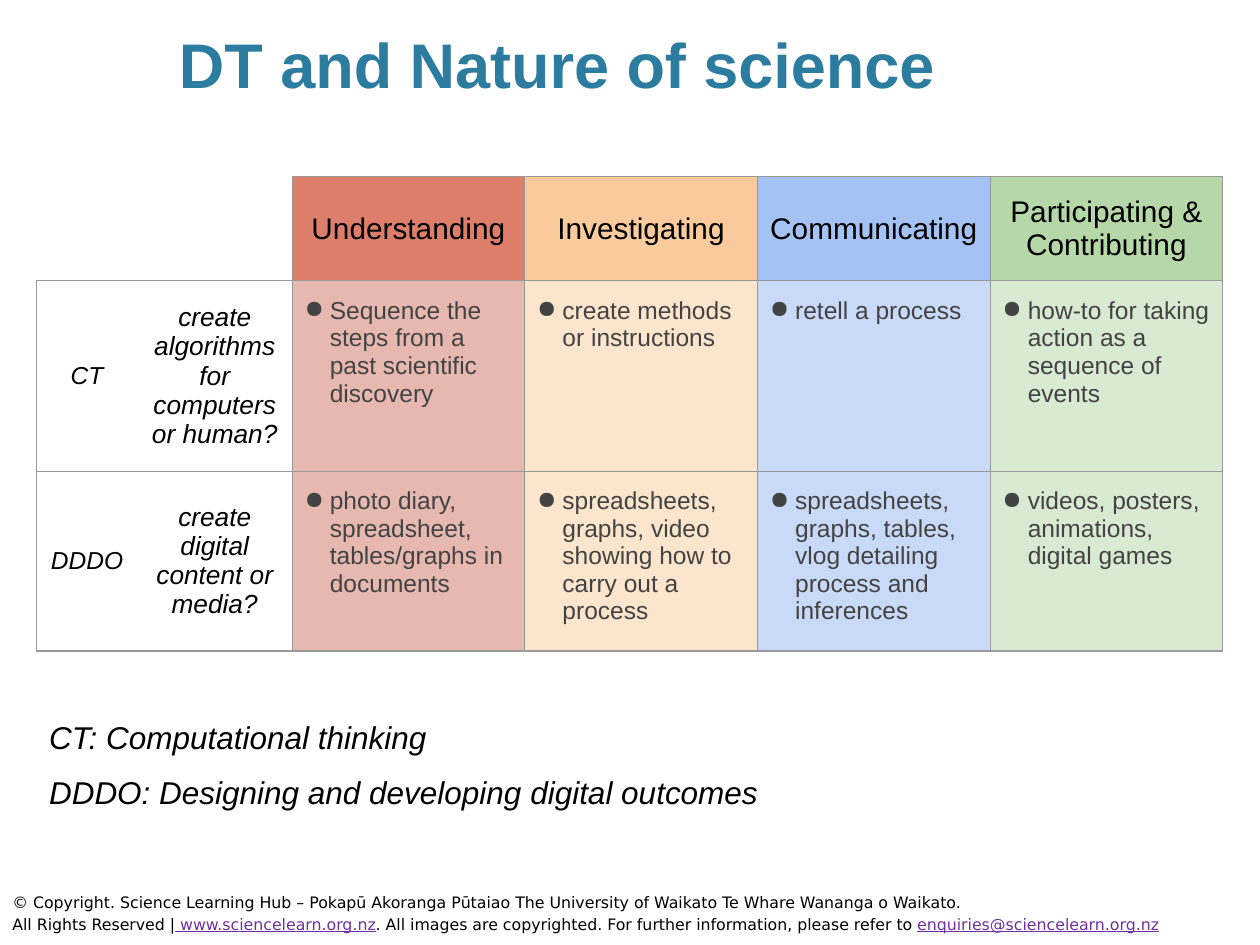
from dataclasses import dataclass
from lxml import etree
from pptx import Presentation
from pptx.dml.color import RGBColor
from pptx.enum.text import MSO_ANCHOR, PP_ALIGN
from pptx.oxml.ns import qn
from pptx.util import Cm, Pt

TOP, MID, LOW = MSO_ANCHOR.TOP, MSO_ANCHOR.MIDDLE, MSO_ANCHOR.BOTTOM
LEFT, MIDDLE = PP_ALIGN.LEFT, PP_ALIGN.CENTER


@dataclass(frozen=True)
class Style:
    size: float
    color: str = "000000"
    font: str = "Arial"
    bold: bool = False
    italic: bool = False
    under: bool = False


@dataclass(frozen=True)
class Theme:
    title: Style = Style(36, "2C7C9F", bold=True)
    head: Style = Style(17)
    code: Style = Style(14, italic=True)
    ask: Style = Style(15, italic=True)
    item: Style = Style(14, "434343")
    key: Style = Style(18, italic=True)
    foot: Style = Style(9, font="DejaVu Sans")
    link: Style = Style(9, "7030A0", "DejaVu Sans", under=True)
    edge: str = "999999"
    heads: tuple = ("DD7E6B", "F9CB9C", "A4C2F4", "B6D7A8")
    tints: tuple = ("E6B8AF", "FCE5CD", "C9DAF8", "D9EAD3")


THEME = Theme()
HEADS = ["Understanding", "Investigating", "Communicating",
         "Participating & Contributing"]
ROWS = [
    ("CT", "create algorithms for computers or human?",
     ["Sequence the steps from a past scientific discovery",
      "create methods or instructions",
      "retell a process",
      "how-to for taking action as a sequence of events"]),
    ("DDDO", "create digital content or media?",
     ["photo diary, spreadsheet, tables/graphs in documents",
      "spreadsheets, graphs, video showing how to carry out a process",
      "spreadsheets, graphs, tables, vlog detailing process and inferences",
      "videos, posters, animations, digital games"]),
]
WIDTHS = [2.03, 3.12] + [4.69] * 4
HEIGHTS = [1.42, 1.42, 3.2]


def add_run(para, text, style):
    run = para.add_run()
    run.text = text
    font = run.font
    font.name, font.size = style.font, Pt(style.size)
    font.bold, font.italic, font.underline = style.bold, style.italic, style.under
    font.color.rgb = RGBColor.from_string(style.color)


def add_box(slide, place, paras, align=LEFT, anchor=TOP):
    """Add a text box; each paragraph is a list of (text, style) runs."""
    frame = slide.shapes.add_textbox(*map(Cm, place)).text_frame
    frame.word_wrap = True
    frame.vertical_anchor = anchor
    frame.margin_left = frame.margin_right = Cm(0.25)
    frame.margin_top = frame.margin_bottom = Cm(0.25)
    for i, runs in enumerate(paras):
        para = frame.add_paragraph() if i else frame.paragraphs[0]
        para.alignment = align
        for text, style in runs:
            add_run(para, text, style)
    return frame


def add_bullet(para, color):
    props = para._p.get_or_add_pPr()
    props.set("marL", str(Cm(0.51)))
    props.set("indent", str(-Cm(0.51)))
    tint = etree.SubElement(props, qn("a:buClr"))
    etree.SubElement(tint, qn("a:srgbClr")).set("val", color)
    etree.SubElement(props, qn("a:buChar")).set("char", "●")


def set_edges(cell, sides):
    """Draw the named sides (from "LRTB") and clear the others."""
    props = cell._tc.get_or_add_tcPr()
    for i, side in enumerate("LRTB"):
        line = etree.Element(qn("a:ln" + side), w=str(Pt(0.75)))
        if side in sides:
            fill = etree.SubElement(line, qn("a:solidFill"))
            etree.SubElement(fill, qn("a:srgbClr")).set("val", THEME.edge)
        else:
            etree.SubElement(line, qn("a:noFill"))
        props.insert(i, line)


def fill_cell(cell, text, style, fill=None, sides="LRTB", bullet=False):
    cell.margin_left = cell.margin_right = Cm(0.25)
    cell.margin_top = cell.margin_bottom = Cm(0.33)
    cell.vertical_anchor = TOP if bullet else MID
    if fill:
        cell.fill.solid()
        cell.fill.fore_color.rgb = RGBColor.from_string(fill)
    else:
        cell.fill.background()
    set_edges(cell, sides)
    para = cell.text_frame.paragraphs[0]
    para.alignment = LEFT if bullet else MIDDLE
    if bullet:
        add_bullet(para, style.color)
    if text:
        add_run(para, text, style)


def add_grid(slide):
    table = slide.shapes.add_table(
        len(HEIGHTS), len(WIDTHS), Cm(0.74), Cm(3.56),
        Cm(sum(WIDTHS)), Cm(sum(HEIGHTS))).table
    table.first_row = table.horz_banding = False
    for col, width in zip(table.columns, WIDTHS):
        col.width = Cm(width)
    for row, height in zip(table.rows, HEIGHTS):
        row.height = Cm(height)

    fill_cell(table.cell(0, 0), "", THEME.head, sides="B")
    fill_cell(table.cell(0, 1), "", THEME.head, sides="RB")
    for c, (text, fill) in enumerate(zip(HEADS, THEME.heads), 2):
        fill_cell(table.cell(0, c), text, THEME.head, fill)
    for r, (code, ask, items) in enumerate(ROWS, 1):
        fill_cell(table.cell(r, 0), code, THEME.code, sides="LTB")
        fill_cell(table.cell(r, 1), ask, THEME.ask, sides="RTB")
        for c, (text, fill) in enumerate(zip(items, THEME.tints), 2):
            fill_cell(table.cell(r, c), text, THEME.item, fill, bullet=True)


def add_key(slide):
    frame = add_box(slide, (0.74, 14.22, 23.9, 2.41), [
        [("CT: Computational thinking", THEME.key)],
        [("DDDO: Designing and developing digital outcomes", THEME.key)]])
    last = frame.paragraphs[1]
    last.space_before = last.space_after = Pt(10)


def add_foot(slide):
    foot, link = THEME.foot, THEME.link
    frame = add_box(slide, (0, 17.7, 25.4, 1.35), [
        [("© Copyright. Science Learning Hub – Pokapū Akoranga Pūtaiao "
          "The University of Waikato Te Whare Wananga o Waikato.", foot)],
        [("All Rights Reserved |", foot),
         (" www.sciencelearn.org.nz", link),
         (". All images are copyrighted. For further information, "
          "please refer to ", foot),
         ("enquiries@sciencelearn.org.nz", link)]])
    for para in frame.paragraphs:
        para.line_spacing = 1.15


def main():
    deck = Presentation()
    deck.slide_width, deck.slide_height = Cm(25.4), Cm(19.05)
    slide = deck.slides.add_slide(deck.slide_layouts[6])
    add_box(slide, (1.78, 0.05, 18.9, 2.24),
            [[("DT and Nature of science", THEME.title)]], MIDDLE, LOW)
    add_grid(slide)
    add_key(slide)
    add_foot(slide)
    deck.save("out.pptx")


if __name__ == "__main__":
    main()
